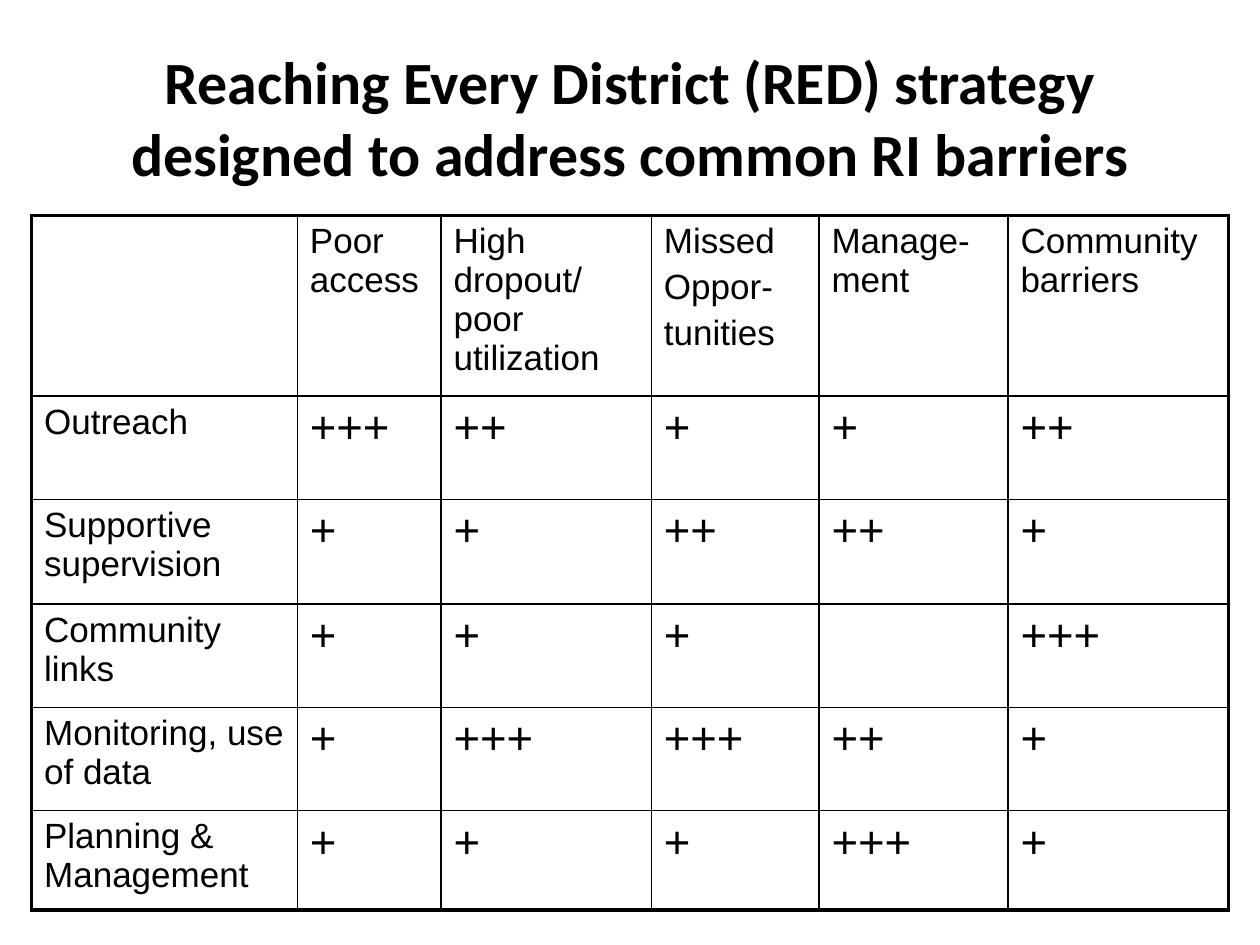
from lxml import etree
from pptx import Presentation, util as u
from pptx.dml.color import RGBColor
from pptx.enum import text
from pptx.oxml.ns import qn

SCALE = 9144
COLORS = {"ink": "000000", "paper": "FFFFFF"}
TITLE = "Reaching Every District (RED) strategy designed to address common RI barriers"
TITLE_FONT = {"name": "Calibri", "size": u.Pt(34.2), "bold": True}
LABEL_FONT = {"name": "Arial", "size": u.Pt(20), "bold": False}
SCORE_FONT = {**LABEL_FONT, "size": u.Pt(26)}
COLUMN_WIDTHS = [211, 114, 167, 133, 150, 175]
ROW_HEIGHTS = [82, 82, 83, 82, 82, 79]
BARRIERS = ["", "Poor access", "High dropout/ poor utilization",
            "Missed\nOppor-\ntunities", "Manage-ment", "Community barriers"]
SCORES = {
    "Outreach": [3, 2, 1, 1, 2],
    "Supportive supervision": [1, 1, 2, 2, 1],
    "Community links": [1, 1, 1, 0, 3],
    "Monitoring, use of data": [1, 3, 3, 2, 1],
    "Planning & Management": [1, 1, 1, 3, 1],
}


def px(*lengths):
    """Turn whole pixels into EMU."""
    return [u.Emu(length * SCALE) for length in lengths]


def apply(target, values):
    """Set attributes from a dict of format values."""
    for name, value in values.items():
        setattr(target, name, value)


def write(para, words, font):
    """Add one formatted run to a paragraph."""
    span = para.add_run()
    span.text = words
    apply(span.font, font)
    span.font.color.rgb = RGBColor.from_string(COLORS["ink"])


def add_title(page):
    """Place the centred heading."""
    box = page.shapes.add_textbox(*px(50, 30, 900, 125))
    apply(box.text_frame, {"word_wrap": True,
                           "vertical_anchor": text.MSO_ANCHOR.MIDDLE})
    para = box.text_frame.paragraphs[0]
    para.alignment = text.PP_ALIGN.CENTER
    write(para, TITLE, TITLE_FONT)


def space_before(para, percent):
    """Set the gap above a paragraph as a share of its line."""
    gap = etree.SubElement(para._p.get_or_add_pPr(), qn("a:spcBef"))
    etree.SubElement(gap, qn("a:spcPct"), val=str(percent * 1000))


def add_border(cell, side, width):
    """Draw one side of a cell."""
    line = etree.SubElement(cell._tc.get_or_add_tcPr(), qn(f"a:ln{side}"),
                            w=str(u.Pt(width)))
    fill = etree.SubElement(line, qn("a:solidFill"))
    etree.SubElement(fill, qn("a:srgbClr"), val=COLORS["ink"])


def fill_cell(cell, words, font, outer):
    """Write a cell and draw its borders, heavier on outer sides."""
    for side in "LRTB":
        add_border(cell, side, 2.25 if outer[side] else 1)
    cell.fill.background()
    frame = cell.text_frame
    for index, line in enumerate(words.split("\n")):
        para = frame.add_paragraph() if index else frame.paragraphs[0]
        space_before(para, 20)
        if line:
            write(para, line, font)


def add_matrix(page):
    """Build the table of strategy components against barriers."""
    rows = [BARRIERS] + [[label] + ["+" * score for score in scores]
                         for label, scores in SCORES.items()]
    last_row, last_column = len(rows) - 1, len(BARRIERS) - 1
    table = page.shapes.add_table(len(rows), len(BARRIERS),
                                  *px(25, 171, 950, 553)).table
    apply(table, {"first_row": False, "horz_banding": False})
    for column, width in zip(table.columns, px(*COLUMN_WIDTHS)):
        column.width = width
    for row, height in zip(table.rows, px(*ROW_HEIGHTS)):
        row.height = height
    for r, row in enumerate(rows):
        for c, words in enumerate(row):
            outer = {"L": c == 0, "R": c == last_column,
                     "T": r == 0, "B": r == last_row}
            font = SCORE_FONT if r and c else LABEL_FONT
            fill_cell(table.cell(r, c), words, font, outer)


def main():
    """Build the slide and save it."""
    deck = Presentation()
    deck.slide_width, deck.slide_height = px(1000, 750)
    page = deck.slides.add_slide(deck.slide_layouts[6])
    background = page.background.fill
    background.solid()
    background.fore_color.rgb = RGBColor.from_string(COLORS["paper"])
    add_title(page)
    add_matrix(page)
    deck.save("out.pptx")


if __name__ == "__main__":
    main()
